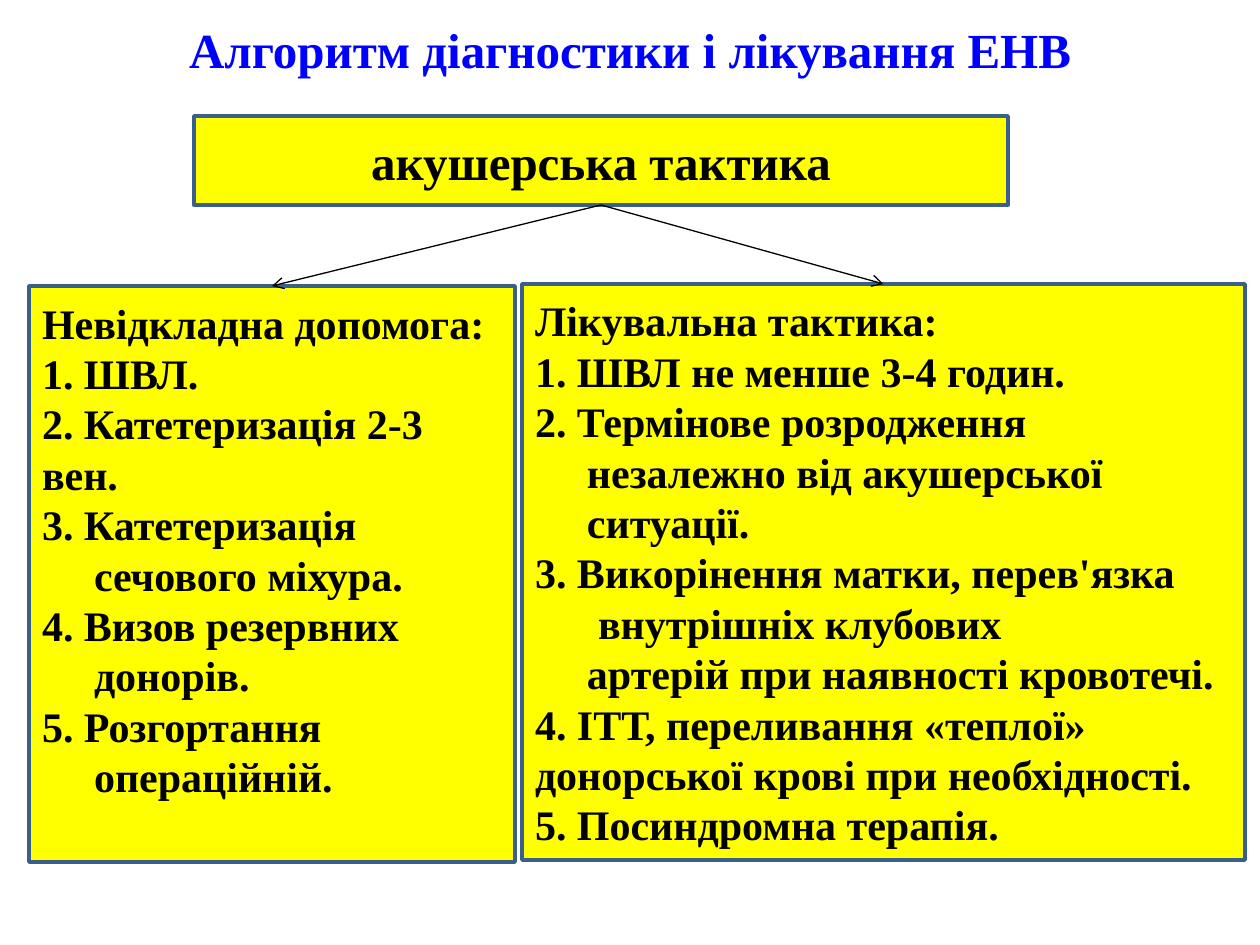
from lxml import etree
from pptx import Presentation, util as u
from pptx.dml.color import RGBColor
from pptx.enum import shapes, text
from pptx.oxml.ns import qn

INK = {"title": "0000FF", "fill": "FFFF00", "edge": "3A5F8C", "text": "000000"}
FACE = "Times New Roman"
STEP = 52
DEEP = 63

FIRST = [
    (0, "Невідкладна допомога:"),
    (0, "1. ШВЛ."),
    (0, "2. Катетеризація 2-3 вен."),
    (0, "3. Катетеризація"),
    (STEP, "сечового міхура."),
    (0, "4. Визов резервних"),
    (STEP, "донорів."),
    (0, "5. Розгортання"),
    (STEP, "операційній."),
]
CARE = [
    (0, "Лікувальна тактика:"),
    (0, "1. ШВЛ не менше 3-4 годин."),
    (0, "2. Термінове розродження"),
    (STEP, "незалежно від акушерської"),
    (STEP, "ситуації."),
    (0, "3. Викорінення матки, перев'язка"),
    (DEEP, "внутрішніх клубових"),
    (STEP, "артерій при наявності кровотечі."),
    (0, "4. ІТТ, переливання «теплої» донорської крові при необхідності."),
    (0, "5. Посиндромна терапія."),
]


def px(n):
    return u.Emu(round(n * 914400 / 126))


def color(name):
    return RGBColor.from_string(INK[name])


def style(item, **values):
    for key, value in values.items():
        setattr(item, key, value)


def write(frame, lines, size, ink, align, anchor, foot=6):
    style(frame, word_wrap=True, vertical_anchor=anchor,
          auto_size=text.MSO_AUTO_SIZE.NONE, margin_left=px(13),
          margin_right=px(13), margin_top=px(6), margin_bottom=px(foot))
    for i, (indent, line) in enumerate(lines):
        par = frame.add_paragraph() if i else frame.paragraphs[0]
        par.alignment = align
        par._p.get_or_add_pPr().set("marL", str(px(indent)))
        run = par.add_run()
        run.text = line
        style(run.font, name=FACE, size=u.Pt(size), bold=True)
        run.font.color.rgb = color(ink)


def title(slide, box, line):
    head = slide.shapes.title
    style(head, **dict(zip(("left", "top", "width", "height"), map(px, box))))
    write(head.text_frame, [(0, line)], 28, "title",
          text.PP_ALIGN.CENTER, text.MSO_ANCHOR.TOP)


def panel(slide, box, lines, size=24, align=text.PP_ALIGN.LEFT, foot=6):
    shape = slide.shapes.add_shape(
        shapes.MSO_SHAPE.FLOWCHART_PROCESS, *map(px, box))
    shape.shadow.inherit = False
    shape.fill.solid()
    shape.fill.fore_color.rgb = color("fill")
    shape.line.color.rgb = color("edge")
    shape.line.width = u.Pt(2)
    write(shape.text_frame, lines, size, "text", align,
          text.MSO_ANCHOR.MIDDLE, foot)
    return shape


def arrow(slide, start, end):
    link = slide.shapes.add_connector(shapes.MSO_CONNECTOR.STRAIGHT, 0, 0, 0, 0)
    link.begin_connect(start, 2)
    link.end_connect(end, 0)
    link.line.color.rgb = color("text")
    link.line.width = u.Pt(0.75)
    etree.SubElement(link.line._get_or_add_ln(), qn("a:tailEnd"), type="arrow")
    etree.SubElement(link._element.spPr, qn("a:effectLst"))


def main():
    deck = Presentation()
    style(deck, slide_width=px(1260), slide_height=px(945))
    slide = deck.slides.add_slide(deck.slide_layouts[5])
    title(slide, (0, 13, 1260, 72), "Алгоритм діагностики і лікування ЕНВ")
    root = panel(slide, (194, 116, 814, 89), [(0, "акушерська тактика")],
                 28, text.PP_ALIGN.CENTER)
    left = panel(slide, (29, 286, 486, 576), FIRST, foot=56)
    right = panel(slide, (522, 284, 723, 576), CARE)
    for end in (left, right):
        arrow(slide, root, end)
    deck.save("out.pptx")


if __name__ == "__main__":
    main()
